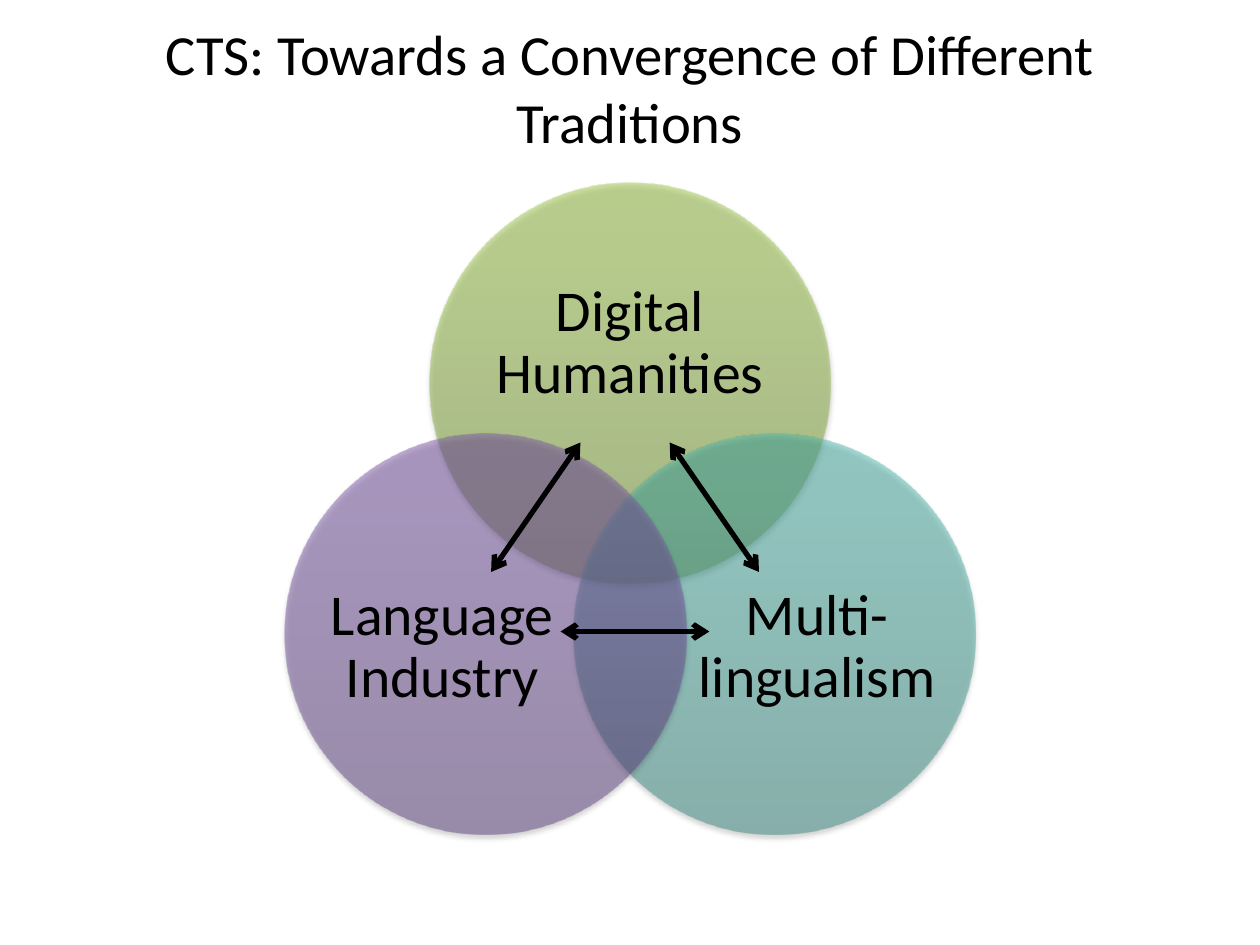
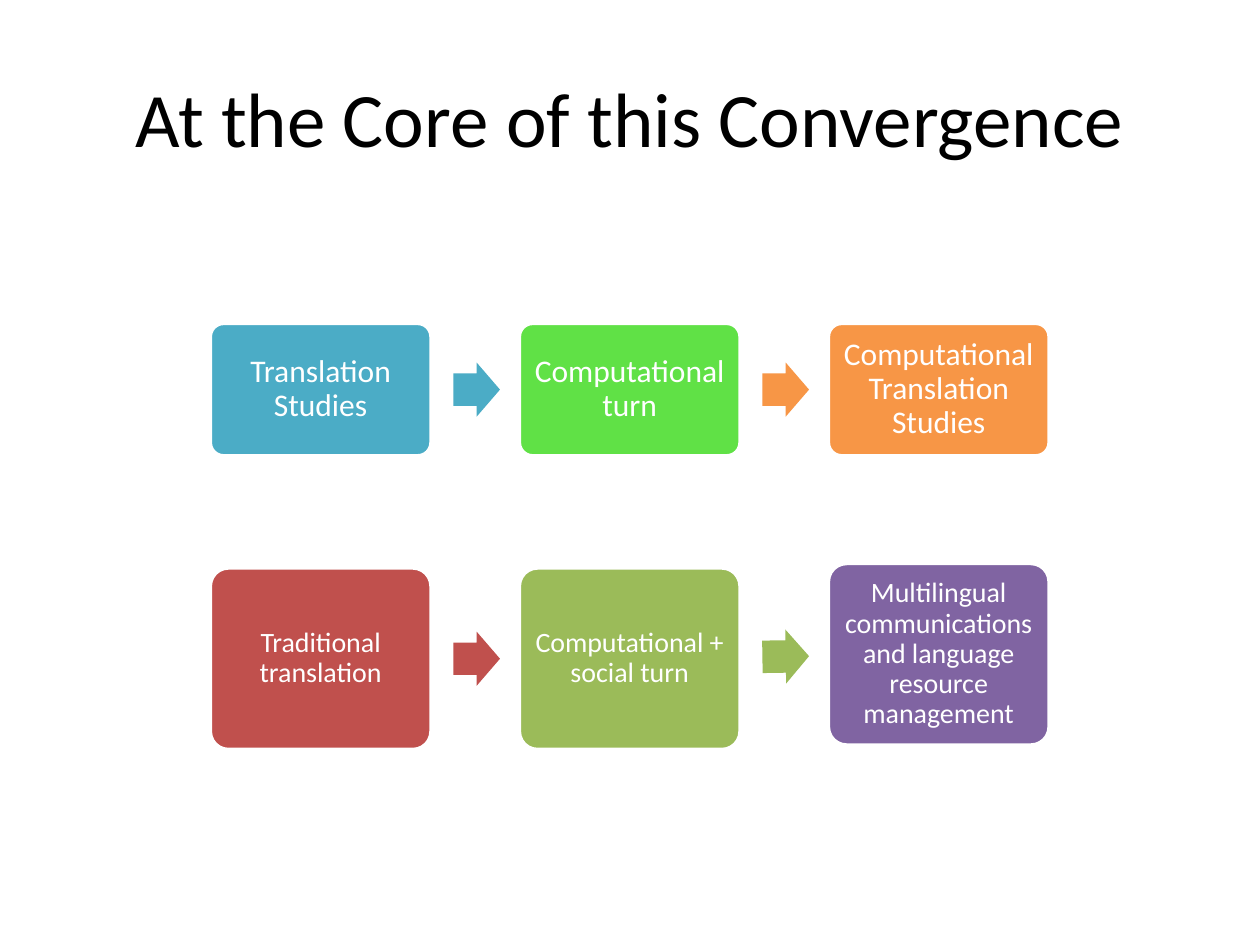
"""Two slides on the convergence of traditions in computational translation studies."""
from lxml import etree
from pptx import Presentation
from pptx import util as u
from pptx.dml import color
from pptx.enum import shapes, text
from pptx.oxml.ns import qn

HUE = {
    "black": "000000", "white": "FFFFFF", "aqua": "4BACC6", "lime": "60E146",
    "orange": "F79646", "red": "C0504D", "olive": "9BBB59", "purple": "8064A2",
}
FADE = {
    "green": ("779737", "9BC348", "9DC746"),
    "teal": ("3D8B83", "50B5AA", "4EB8AC"),
    "violet": ("5F4480", "7B58A6", "7C57A8"),
}
RGB = {name: color.RGBColor.from_string(code) for name, code in HUE.items()}
FONT = "Calibri"


def write(shape, words, size, hue="black", inset=None, space=None):
    frame = shape.text_frame
    frame.word_wrap = True
    frame.auto_size = text.MSO_AUTO_SIZE.NONE
    frame.vertical_anchor = text.MSO_ANCHOR.MIDDLE
    if inset is not None:
        frame.margin_left = frame.margin_right = u.Cm(inset)
        frame.margin_top = frame.margin_bottom = u.Cm(inset)
    para = frame.paragraphs[0]
    para.alignment = text.PP_ALIGN.CENTER
    para.line_spacing = space
    run = para.add_run()
    run.text = words
    run.font.name, run.font.size = FONT, u.Pt(size)
    run.font.color.rgb = RGB[hue]


def tint(parent, tag, code, alpha, **attrs):
    node = etree.SubElement(parent, qn(tag), attrs)
    tone = etree.SubElement(node, qn("a:srgbClr"), val=code)
    etree.SubElement(tone, qn("a:alpha"), val=str(alpha * 1000))


deck = Presentation()
deck.slide_width, deck.slide_height = u.Cm(25.4), u.Cm(19.05)

pages = []
for words, size, high in [
    ("CTS: Towards a Convergence of Different Traditions", 32.4, 1.97),
    ("At the Core of this Convergence", 44, 3.18),
]:
    page = deck.slides.add_slide(deck.slide_layouts[5])
    title = page.shapes.title
    title.left, title.top = u.Cm(1.27), u.Cm(0.76)
    title.width, title.height = u.Cm(22.86), u.Cm(high)
    write(title, words, size)
    pages.append(page)
venn, flow = pages

disc = u.Cm(8.09)
for words, fade, left, top, box in [
    ("Digital Humanities", "green", 8.66, 3.68, (9.73, 5.11, 5.94, 3.63)),
    ("Multi-lingualism", "teal", 11.57, 8.74, (14.05, 10.84, 4.85, 4.45)),
    ("Language Industry", "violet", 5.74, 8.74, (6.49, 10.84, 4.85, 4.45)),
]:
    ring = venn.shapes.add_shape(shapes.MSO_SHAPE.OVAL, u.Cm(left), u.Cm(top), disc, disc)
    ring.line.fill.background()
    ring.fill.gradient()
    ring.fill.gradient_angle = 90
    ring.shadow.inherit = False
    props = ring._element.spPr
    stops = props.find(qn("a:gradFill")).find(qn("a:gsLst"))
    stops.clear()
    for pos, code in zip((0, 80, 100), FADE[fade]):
        tint(stops, "a:gs", code, 50, pos=str(pos * 1000))
    tint(props.find(qn("a:effectLst")), "a:outerShdw", HUE["black"], 35,
         blurRad=str(u.Pt(3.1)), dist=str(u.Pt(1.8)), dir="5400000", rotWithShape="0")
    label = venn.shapes.add_textbox(*map(u.Cm, box))
    write(label, words, 33, inset=0, space=0.9)

for ends in [
    (9.9, 11.53, 11.7, 8.92),
    (15.3, 11.53, 13.5, 8.92),
    (11.3, 12.73, 14.3, 12.73),
]:
    link = venn.shapes.add_connector(shapes.MSO_CONNECTOR.STRAIGHT, *map(u.Cm, ends))
    link.line.width = u.Pt(3)
    link.line.color.rgb = RGB["black"]
    for tag in ("a:headEnd", "a:tailEnd"):
        etree.SubElement(link.line._ln, qn(tag), type="arrow")
    etree.SubElement(link._element.spPr, qn("a:effectLst"))

left, step, wide = 4.24, 6.23, 4.45
long, tall = 0.94, 1.09
for size, high, tops, tips, turn, cells in [
    (18, 2.67, (6.52, 6.52, 6.52), ("aqua", "orange"), 0, [
        ("Translation Studies", "aqua"),
        ("Computational turn", "lime"),
        ("Computational Translation Studies", "orange")]),
    (16, 3.66, (11.45, 11.45, 11.36), ("red", "olive"), -0.9, [
        ("Traditional translation", "red"),
        ("Computational + social turn", "olive"),
        ("Multilingual communications and language resource management", "purple")]),
]:
    for col, (words, hue) in enumerate(cells):
        x = left + col * step
        card = flow.shapes.add_shape(shapes.MSO_SHAPE.ROUNDED_RECTANGLE,
                                     u.Cm(x), u.Cm(tops[col]), u.Cm(wide), u.Cm(high))
        card.adjustments[0] = 0.1
        card.shadow.inherit = False
        card.fill.solid()
        card.fill.fore_color.rgb = RGB[hue]
        card.line.color.rgb = RGB["white"]
        card.line.width = u.Pt(2)
        write(card, words, size, hue="white", inset=0.15, space=0.9)
        if col < len(tips):
            mid = (tops[col] + tops[col + 1] + high) / 2
            tip = flow.shapes.add_shape(shapes.MSO_SHAPE.RIGHT_ARROW, u.Cm(x + wide + 0.45),
                                        u.Cm(mid - tall / 2), u.Cm(long), u.Cm(tall))
            tip.adjustments[0], tip.adjustments[1] = 0.6, 0.5
            tip.rotation = turn * col
            tip.shadow.inherit = False
            tip.fill.solid()
            tip.fill.fore_color.rgb = RGB[tips[col]]
            tip.line.fill.background()

deck.save("out.pptx")
